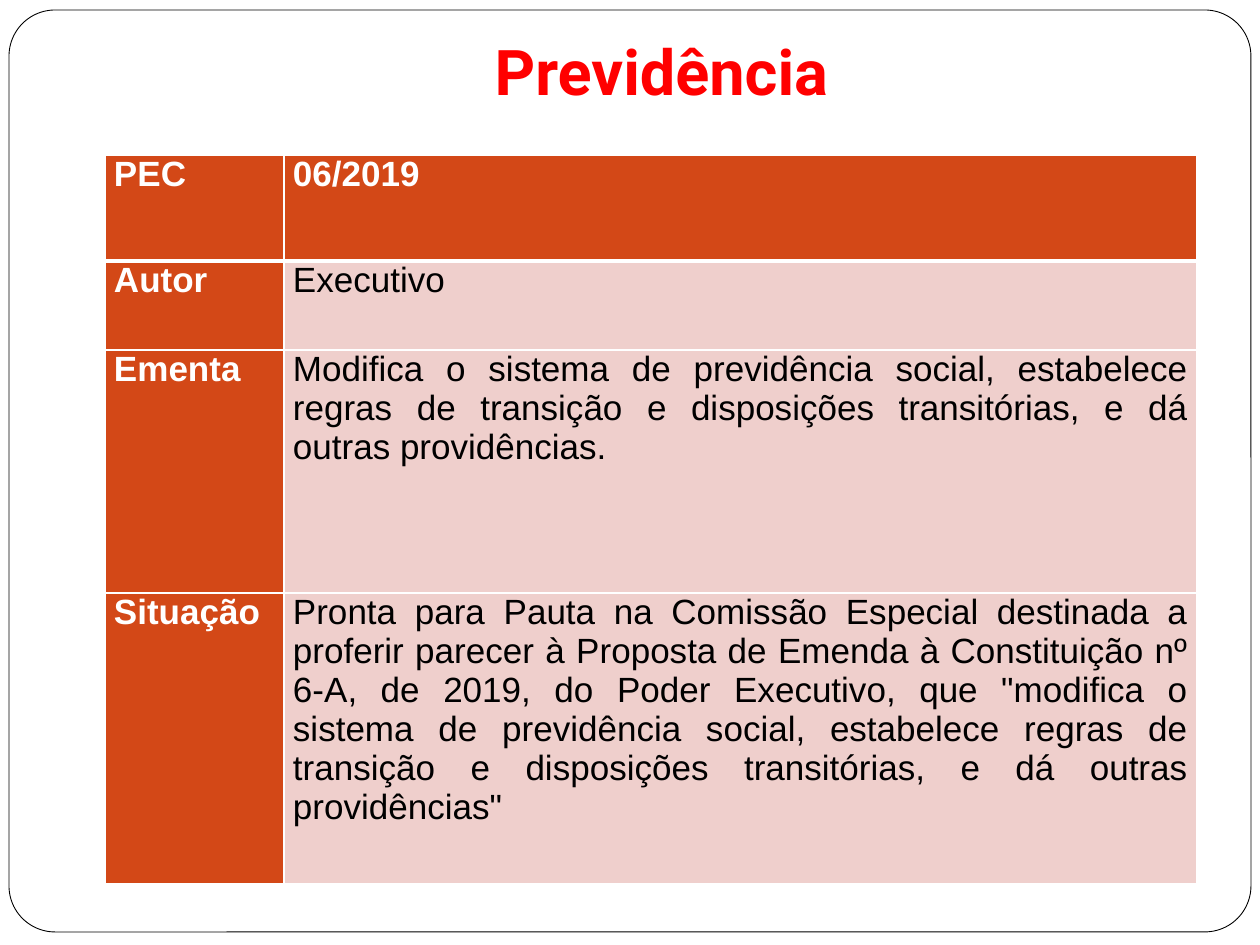
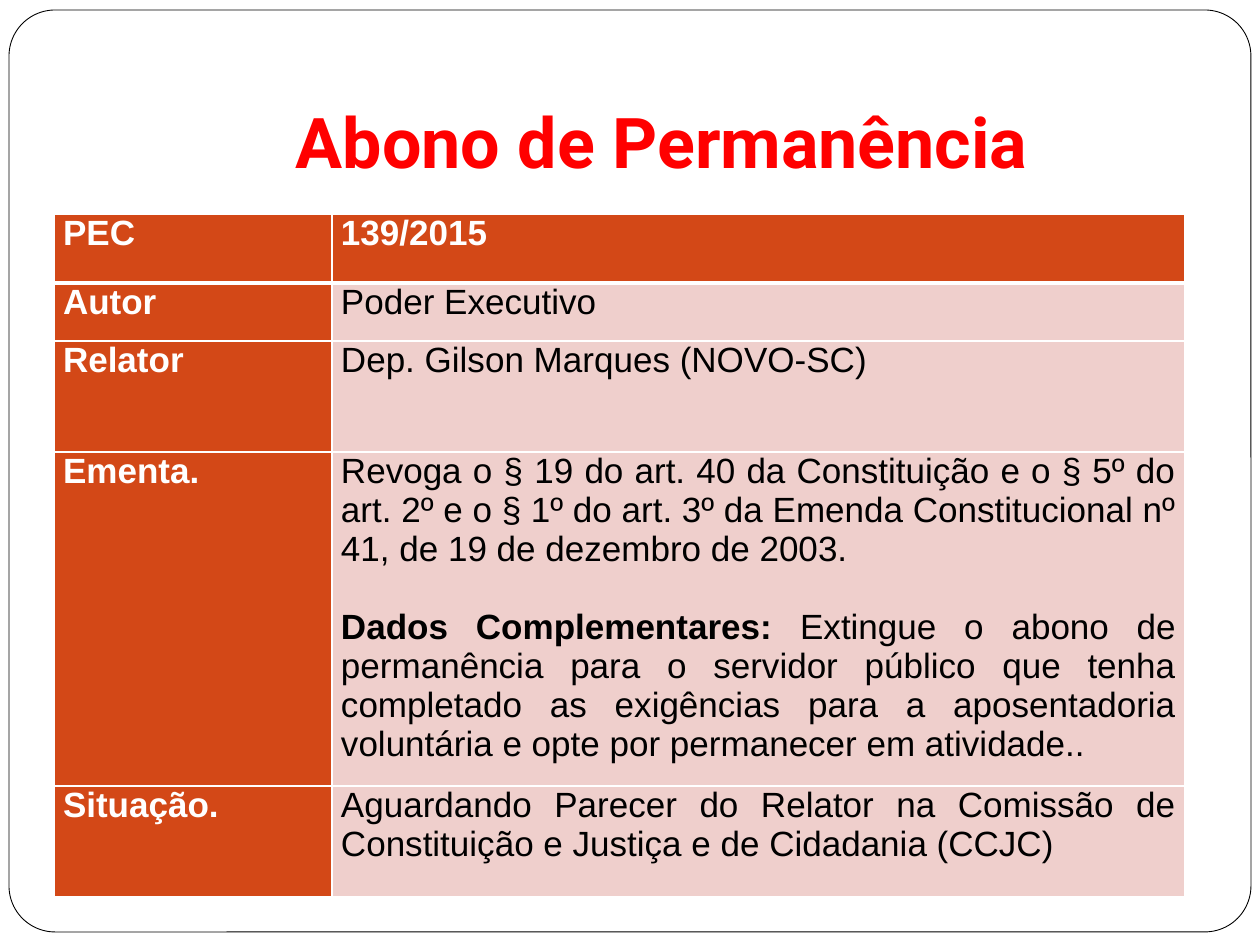
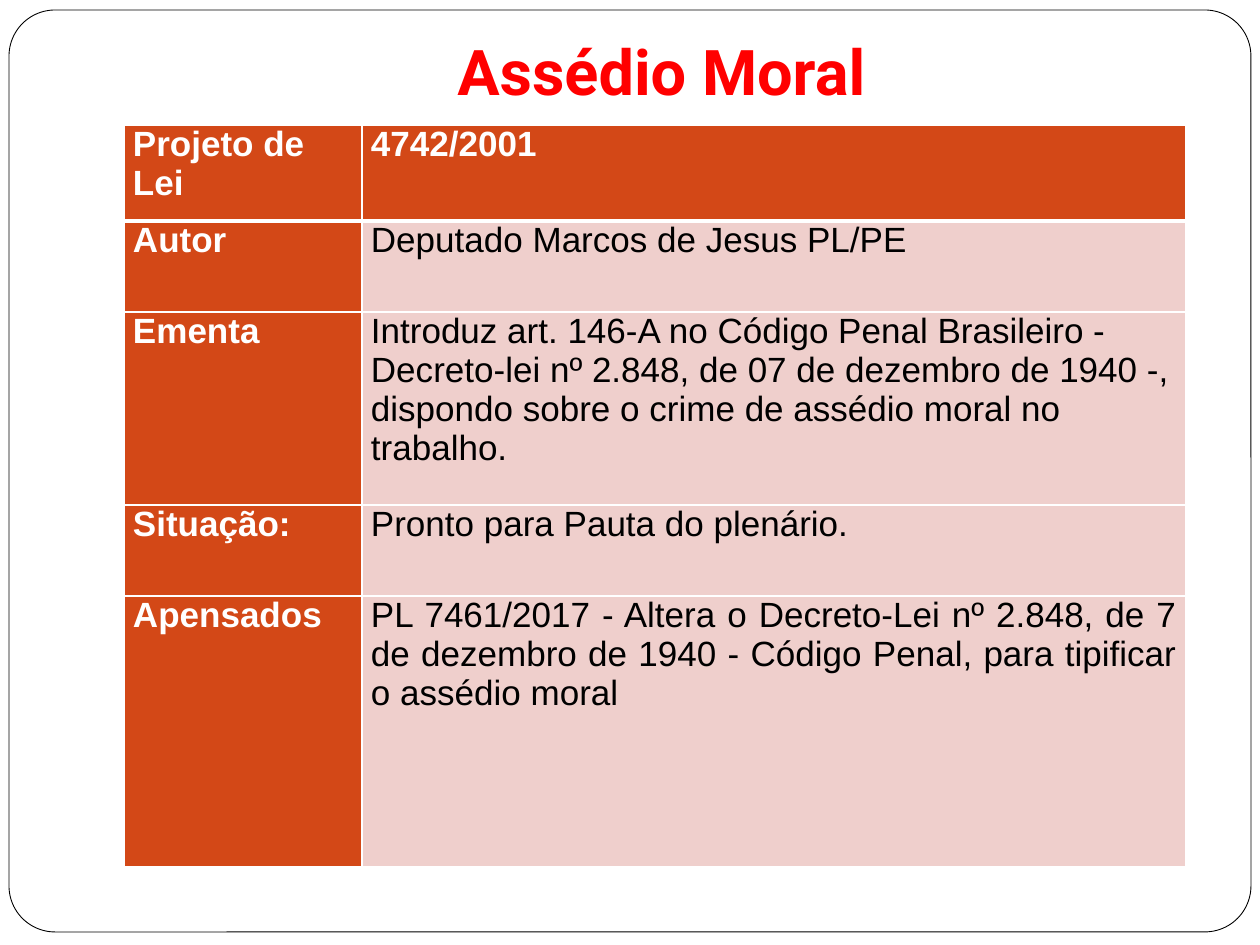
from dataclasses import dataclass
from typing import NamedTuple

from lxml.etree import SubElement
from pptx import Presentation
from pptx.dml.color import RGBColor
from pptx.enum.shapes import MSO_SHAPE as Preset
from pptx.enum.text import MSO_ANCHOR as Anchor, PP_ALIGN as Align
from pptx.oxml.ns import qn
from pptx.slide import Slide
from pptx.table import _Cell as Cell
from pptx.text.text import _Paragraph as Paragraph
from pptx.util import Emu, Pt

PIXELS_PER_INCH = 126


@dataclass(frozen=True)
class Theme:
    """Colours, fonts, type sizes and line widths shared by the slides."""

    white: str = "FFFFFF"
    black: str = "000000"
    title: str = "FF0000"
    accent: str = "D34817"
    tint: str = "EFCFCC"
    title_font: str = "Roboto"
    body_font: str = "Arial"
    body_size: int = 20
    frame_line: float = 0.5
    grid_line: int = 1
    header_line: int = 3


class Box(NamedTuple):
    """A rectangle in px."""

    left: int
    top: int
    width: int
    height: int


class Entry(NamedTuple):
    """One table row: its height in px, label, value and optional note."""

    height: int
    label: str
    value: str
    align: Align = Align.JUSTIFY
    note_heading: str = ""
    note: str = ""


@dataclass(frozen=True)
class Bill:
    """One slide: a title over the table that describes a bill."""

    title: str
    title_size: int
    title_bottom_inset: int
    left: int
    top: int
    columns: tuple[int, int]
    entries: tuple[Entry, ...]


THEME = Theme()
SLIDE = Box(0, 0, 1260, 945)
FRAME = Box(9, 10, 1242, 922)
FRAME_ROUNDING = 0.05
TITLE = Box(126, 38, 1071, 157)
CELL_INSET = 9
NOTE_GAP = 39

BILLS = (
    Bill("Previdência", 36, 87, 105, 155, (179, 913), (
        Entry(106, "PEC", "06/2019"),
        Entry(89, "Autor", "Executivo"),
        Entry(243, "Ementa", "Modifica o sistema de previdência social, estabelece regras de "
              "transição e disposições transitórias, e dá outras providências."),
        Entry(291, "Situação", "Pronta para Pauta na Comissão Especial destinada a proferir "
              "parecer à Proposta de Emenda à Constituição nº 6-A, de 2019, do Poder Executivo, "
              'que "modifica o sistema de previdência social, estabelece regras de transição e '
              'disposições transitórias, e dá outras providências"'),
    )),
    Bill("Abono de Permanência", 40, 13, 54, 214, (278, 853), (
        Entry(69, "PEC", "139/2015"),
        Entry(58, "Autor", "Poder Executivo"),
        Entry(111, "Relator", "Dep. Gilson Marques (NOVO-SC)"),
        Entry(334, "Ementa.", "Revoga o § 19 do art. 40 da Constituição e o § 5º do art. 2º e o "
              "§ 1º do art. 3º da Emenda Constitucional nº 41, de 19 de dezembro de 2003.",
              note_heading="Dados Complementares: ",
              note="Extingue o abono de permanência para o servidor público que tenha completado "
              "as exigências para a aposentadoria voluntária e opte por permanecer em atividade.."),
        Entry(111, "Situação.", "Aguardando Parecer do Relator na Comissão de Constituição e "
              "Justiça e de Cidadania (CCJC)"),
    )),
    Bill("Assédio Moral", 36, 87, 124, 125, (238, 824), (
        Entry(96, "Projeto de Lei", "4742/2001"),
        Entry(91, "Autor", "Deputado Marcos de Jesus PL/PE"),
        Entry(193, "Ementa", "Introduz art. 146-A no Código Penal Brasileiro - Decreto-lei nº "
              "2.848, de 07 de dezembro de 1940 -, dispondo sobre o crime de assédio moral no "
              "trabalho.", Align.LEFT),
        Entry(91, "Situação:", "Pronto para Pauta do plenário."),
        Entry(271, "Apensados", "PL 7461/2017 - Altera o Decreto-Lei nº 2.848, de 7 de dezembro "
              "de 1940 - Código Penal, para tipificar o assédio moral"),
    )),
)


def px(length: int) -> Emu:
    """Turn px into EMU."""
    return Emu(round(length * 914400 / PIXELS_PER_INCH))


def place(box: Box) -> tuple[Emu, ...]:
    """Turn a box in px into EMU."""
    return tuple(px(length) for length in box)


def write(paragraph: Paragraph, text: str, *, font: str = THEME.body_font,
          size: int = THEME.body_size, color: str = THEME.black, bold: bool = False,
          align: Align = Align.LEFT) -> None:
    """Add a formatted run to a paragraph."""
    paragraph.alignment = align
    run = paragraph.add_run()
    run.text = text
    run.font.name = font
    run.font.size = Pt(size)
    run.font.bold = bold
    run.font.color.rgb = RGBColor.from_string(color)


def draw_frame(slide: Slide) -> None:
    """Draw the rounded frame around the slide."""
    shape = slide.shapes.add_shape(Preset.ROUNDED_RECTANGLE, *place(FRAME))
    shape.adjustments[0] = FRAME_ROUNDING
    shape.shadow.inherit = False
    shape.fill.solid()
    shape.fill.fore_color.rgb = RGBColor.from_string(THEME.white)
    shape.line.color.rgb = RGBColor.from_string(THEME.black)
    shape.line.width = Pt(THEME.frame_line)


def draw_title(slide: Slide, bill: Bill) -> None:
    """Write the slide title, resting on its bottom inset."""
    frame = slide.shapes.add_textbox(*place(TITLE)).text_frame
    frame.word_wrap = True
    frame.vertical_anchor = Anchor.BOTTOM
    frame.margin_bottom = px(bill.title_bottom_inset)
    write(frame.paragraphs[0], bill.title, font=THEME.title_font, size=bill.title_size,
          color=THEME.title, bold=True, align=Align.CENTER)


def style_cell(cell: Cell, fill: str, top: int, bottom: int) -> None:
    """Set the insets, white borders and fill of a cell."""
    cell.margin_left = cell.margin_right = px(CELL_INSET)
    cell.margin_top = cell.margin_bottom = 0
    properties = cell._tc.get_or_add_tcPr()
    sides = {"L": THEME.grid_line, "R": THEME.grid_line, "T": top, "B": bottom}
    for side, width in sides.items():
        line = SubElement(properties, qn(f"a:ln{side}"), w=str(Pt(width)))
        solid = SubElement(line, qn("a:solidFill"))
        SubElement(solid, qn("a:srgbClr"), val=THEME.white)
    cell.fill.solid()
    cell.fill.fore_color.rgb = RGBColor.from_string(fill)


def draw_table(slide: Slide, bill: Bill) -> None:
    """Draw the table of a bill."""
    height = sum(entry.height for entry in bill.entries)
    box = Box(bill.left, bill.top, sum(bill.columns), height)
    table = slide.shapes.add_table(len(bill.entries), len(bill.columns), *place(box)).table
    table.first_col = True
    table.horz_banding = False
    for column, width in zip(table.columns, bill.columns):
        column.width = px(width)
    for index, entry in enumerate(bill.entries):
        table.rows[index].height = px(entry.height)
        header = index == 0
        top = THEME.header_line if index == 1 else THEME.grid_line
        bottom = THEME.header_line if header else THEME.grid_line
        label, value = table.cell(index, 0), table.cell(index, 1)
        style_cell(label, THEME.accent, top, bottom)
        style_cell(value, THEME.accent if header else THEME.tint, top, bottom)
        write(label.text_frame.paragraphs[0], entry.label, color=THEME.white, bold=True)
        write(value.text_frame.paragraphs[0], entry.value, bold=header, align=entry.align,
              color=THEME.white if header else THEME.black)
        if entry.note:
            paragraph = value.text_frame.add_paragraph()
            paragraph.space_before = px(NOTE_GAP)
            write(paragraph, entry.note_heading, bold=True, align=entry.align)
            write(paragraph, entry.note, align=entry.align)


def main() -> None:
    """Build and save the presentation."""
    presentation = Presentation()
    presentation.slide_width = px(SLIDE.width)
    presentation.slide_height = px(SLIDE.height)
    for bill in BILLS:
        slide = presentation.slides.add_slide(presentation.slide_layouts[6])
        draw_frame(slide)
        draw_title(slide, bill)
        draw_table(slide, bill)
    presentation.save("out.pptx")


if __name__ == "__main__":
    main()
